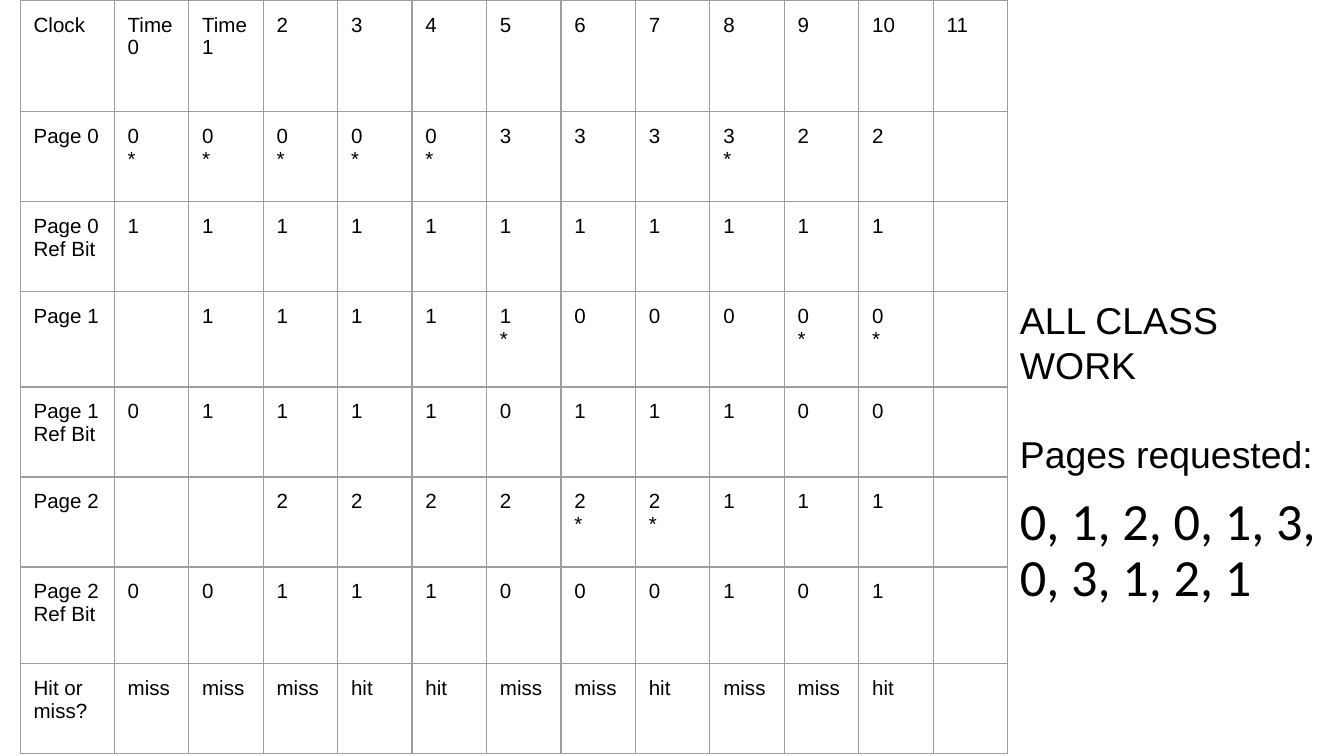
import pptx
import pptx.dml.color
import pptx.enum.text
import pptx.oxml
import pptx.oxml.ns
import pptx.util

SLIDE_WIDTH = 10
SLIDE_HEIGHT = SLIDE_WIDTH * 9 / 16
INSET = 0.1
TABLE_LEFT, TABLE_WIDTH, LABEL_WIDTH = 0.15, 7.35, 0.7
ROW_HEIGHTS = [0.83, 0.67, 0.67, 0.71, 0.67, 0.67, 0.72, 0.67]
TEXT_COLOUR, GRID_COLOUR = "000000", "9E9E9E"

# One line per table row; a star marks the clock hand, on its own line
CLOCK_ROWS = [
    "Clock|Time 0|Time 1|2|3|4|5|6|7|8|9|10|11",
    "Page 0|0*|0*|0*|0*|0*|3|3|3|3*|2|2|",
    "Page 0 Ref Bit|1|1|1|1|1|1|1|1|1|1|1|",
    "Page 1||1|1|1|1|1*|0|0|0|0*|0*|",
    "Page 1 Ref Bit|0|1|1|1|1|0|1|1|1|0|0|",
    "Page 2|||2|2|2|2|2*|2*|1|1|1|",
    "Page 2 Ref Bit|0|0|1|1|1|0|0|0|1|0|1|",
    "Hit or miss?|miss|miss|miss|hit|hit|miss|miss|hit|miss|miss|hit|",
]


def inches(value):
    return pptx.util.Inches(value)


def colour(hex_code):
    return pptx.dml.color.RGBColor.from_string(hex_code)


def set_font(paragraph, size, family="Arial"):
    paragraph.font.name = family
    paragraph.font.size = pptx.util.Pt(size)
    paragraph.font.color.rgb = colour(TEXT_COLOUR)


def set_insets(holder):
    holder.margin_left = holder.margin_right = inches(INSET)
    holder.margin_top = holder.margin_bottom = inches(INSET)


def add_borders(cell):
    properties = cell._tc.get_or_add_tcPr()
    for position, side in enumerate("LRTB"):
        border = pptx.oxml.parse_xml(
            f'<a:ln{side} {pptx.oxml.ns.nsdecls("a")} w="{pptx.util.Pt(0.75)}">'
            f'<a:solidFill><a:srgbClr val="{GRID_COLOUR}"/></a:solidFill></a:ln{side}>')
        properties.insert(position, border)


def fill_cell(cell, text):
    cell.text = text.replace("*", "\n*")
    cell.fill.background()
    set_insets(cell)
    add_borders(cell)
    for paragraph in cell.text_frame.paragraphs:
        set_font(paragraph, 11)


def add_clock_table(slide):
    entries = [line.split("|") for line in CLOCK_ROWS]
    steps = len(entries[0]) - 1
    widths = [LABEL_WIDTH] + [(TABLE_WIDTH - LABEL_WIDTH) / steps] * steps
    clock = slide.shapes.add_table(
        len(entries), len(widths), inches(TABLE_LEFT), 0,
        inches(TABLE_WIDTH), inches(sum(ROW_HEIGHTS))).table
    clock.first_row = clock.horz_banding = False
    for column, width in zip(clock.columns, widths):
        column.width = inches(width)
    for row, height, texts in zip(clock.rows, ROW_HEIGHTS, entries):
        row.height = inches(height)
        for cell, text in zip(row.cells, texts):
            fill_cell(cell, text)


def add_request_note(slide):
    left = 0.749 * SLIDE_WIDTH
    note = slide.shapes.add_textbox(
        inches(left), inches(2.11), inches(SLIDE_WIDTH - left), inches(1.33)).text_frame
    note.word_wrap = True
    note.vertical_anchor = pptx.enum.text.MSO_ANCHOR.TOP
    set_insets(note)
    note.text = "ALL CLASS WORK\nPages requested:\n0, 1, 2, 0, 1, 3, 0, 3, 1, 2, 1"
    heading, label, requests = note.paragraphs
    set_font(heading, 20)
    set_font(label, 20)
    label.space_before = pptx.util.Pt(24)
    set_font(requests, 28, "Calibri")
    requests.line_spacing = 0.9
    requests.space_before = pptx.util.Pt(10)


def main():
    deck = pptx.Presentation()
    deck.slide_width = inches(SLIDE_WIDTH)
    deck.slide_height = inches(SLIDE_HEIGHT)
    slide = deck.slides.add_slide(deck.slide_layouts[6])

    # Page replacement trace on the left, request sequence on the right
    add_clock_table(slide)
    add_request_note(slide)
    deck.save("out.pptx")


if __name__ == "__main__":
    main()
